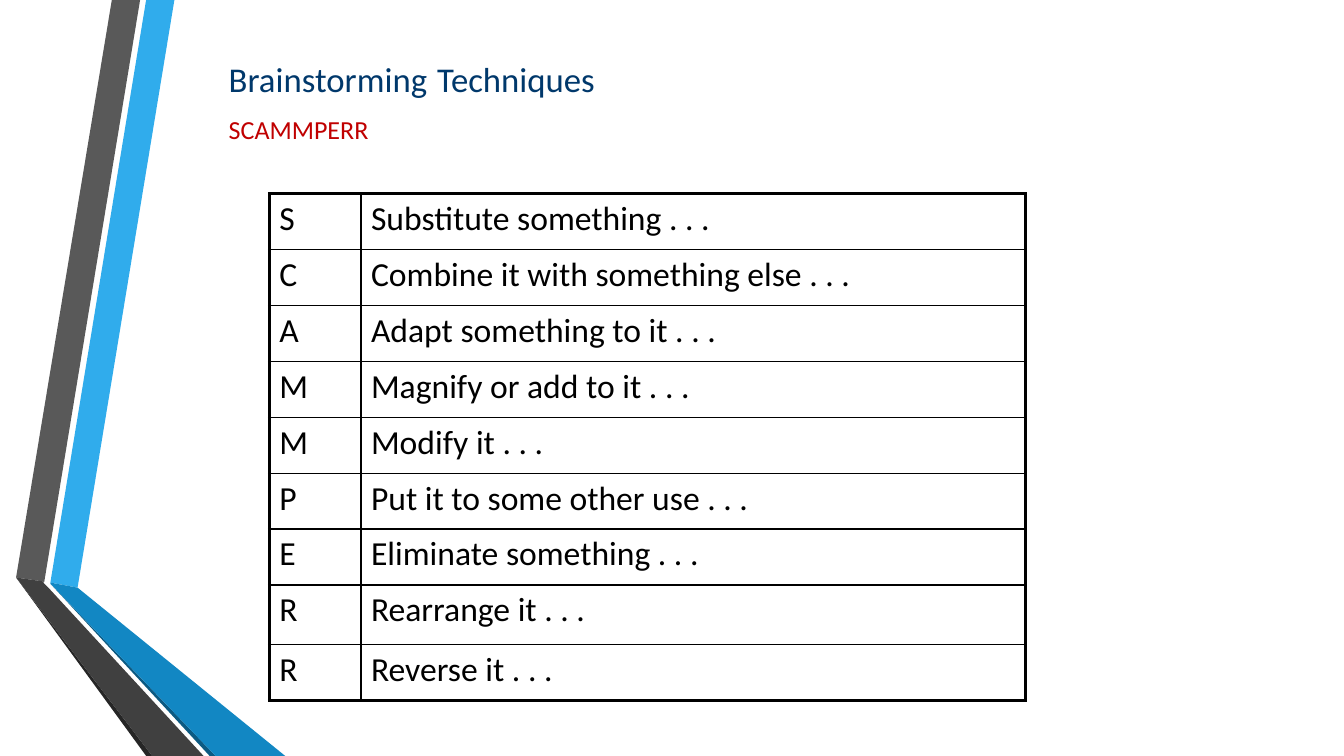
from pptx import Presentation
from pptx.dml.color import RGBColor as RGB
from pptx.enum.text import MSO_ANCHOR as Anchor
from pptx.oxml import parse_xml
from pptx.oxml.ns import nsdecls
from pptx.util import Inches, Pt

HUES = {
    "sky": "30ACEC", "blue": "1287C3", "deep": "0C5A82",
    "gray": "595959", "dark": "404040", "coal": "262626",
    "navy": "00386B", "red": "C00000", "black": "000000",
}

deck = Presentation()
deck.slide_width, deck.slide_height = Inches(13.33), Inches(7.5)
slide = deck.slides.add_slide(deck.slide_layouts[6])


def write(para, text, size=24, hue="black"):
    run = para.add_run()
    run.text = text
    run.font.size = Pt(size)
    run.font.name = "Calibri"
    run.font.color.rgb = RGB.from_string(HUES[hue])


bands = [
    ("sky", [(0.5, 5.78), (0.77, 5.83), (1.73, 0), (1.45, 0)]),
    ("gray", [(1.39, 0), (1.11, 0), (0.16, 5.73), (0.44, 5.77)]),
    ("coal", [(0.16, 5.73), (1.45, 7.5), (1.51, 7.5)]),
    ("deep", [(0.5, 5.79), (2.08, 7.5), (2.14, 7.5)]),
    ("blue", [(0.5, 5.79), (2.14, 7.5), (2.83, 7.5), (0.77, 5.83), (0.5, 5.78)]),
    ("dark", [(2.02, 7.5), (0.48, 5.83), (0.43, 5.78), (0.44, 5.77),
              (0.16, 5.73), (1.51, 7.5)]),
]
for hue, points in bands:
    first, *rest = [(Inches(x), Inches(y)) for x, y in points]
    pen = slide.shapes.build_freeform(*first)
    pen.add_line_segments(rest, close=True)
    band = pen.convert_to_shape()
    band.shadow.inherit = False
    band.fill.solid()
    band.fill.fore_color.rgb = RGB.from_string(HUES[hue])
    band.line.fill.background()

box = slide.shapes.add_textbox(Inches(2.17), Inches(0.5), Inches(9), Inches(0.92))
frame = box.text_frame
frame.word_wrap = True
frame.vertical_anchor = Anchor.MIDDLE
title = frame.paragraphs[0]
title.space_after = Pt(6)
for text, size in [("Brainstorming", 24.8), (" ", 31), ("Techniques", 24.8)]:
    write(title, text, size=size, hue="navy")
name = frame.add_paragraph()
name.space_before = Pt(2.3)
write(name, "SCAMMPERR", size=18.6, hue="red")

steps = [
    ("S", "Substitute something . . ."),
    ("C", "Combine it with something else . . ."),
    ("A", "Adapt something to it . . ."),
    ("M", "Magnify or add to it . . ."),
    ("M", "Modify it . . ."),
    ("P", "Put it to some other use . . ."),
    ("E", "Eliminate something . . ."),
    ("R", "Rearrange it . . ."),
    ("R", "Reverse it . . ."),
]
last = len(steps) - 1
table = slide.shapes.add_table(
    len(steps), 2, Inches(2.67), Inches(1.92), Inches(7.5), Inches(5.03)).table
table.first_row = table.horz_banding = False
table.columns[0].width, table.columns[1].width = Inches(0.91), Inches(6.59)

for r, step in enumerate(steps):
    table.rows[r].height = Inches(0.59 if r == last - 1 else 0.555)
    for c, text in enumerate(step):
        cell = table.cell(r, c)
        write(cell.text_frame.paragraphs[0], text)
        edges = {"L": c == 0, "R": c == 1, "T": r == 0, "B": r == last}
        for side, outer in edges.items():
            width = Pt(2.25 if outer else 1)
            cell._tc.get_or_add_tcPr().append(parse_xml(
                f'<a:ln{side} {nsdecls("a")} w="{width}"><a:solidFill>'
                f'<a:srgbClr val="{HUES["black"]}"/></a:solidFill></a:ln{side}>'))
        cell.fill.background()

deck.save("out.pptx")
